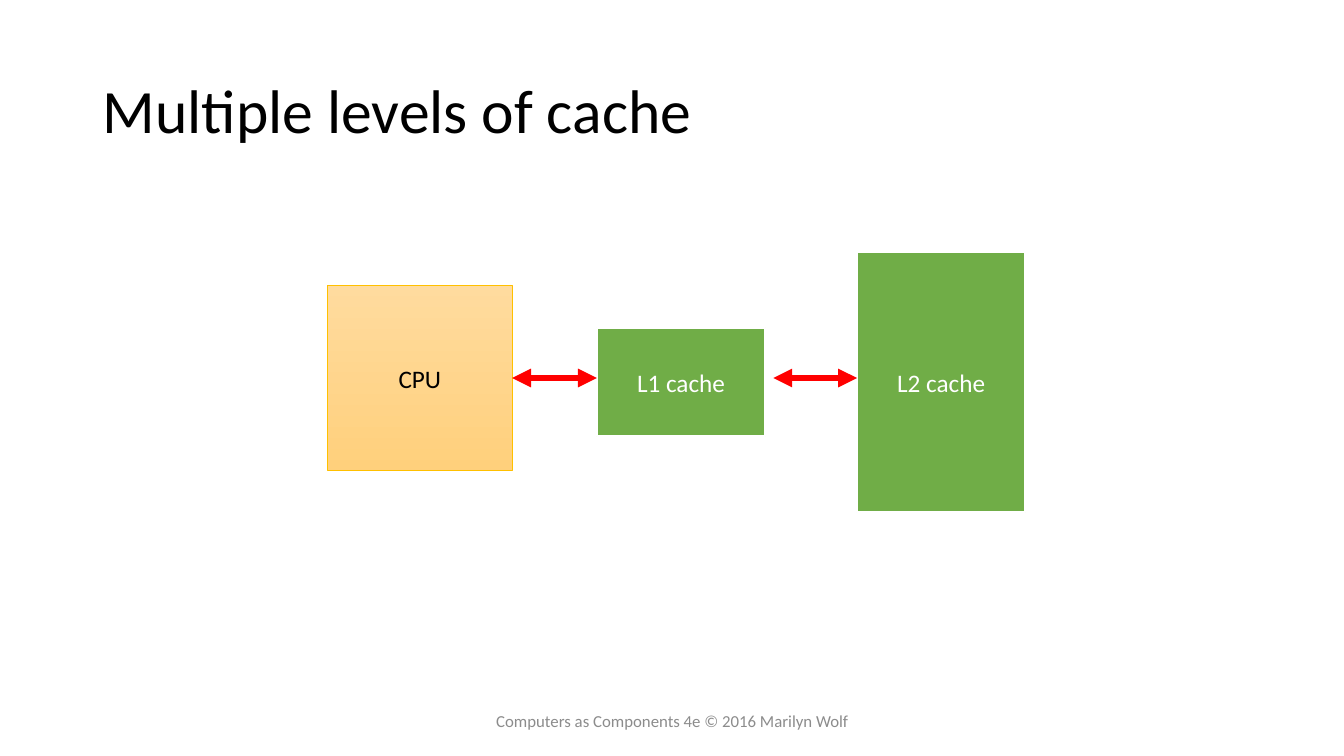
from lxml import etree
from pptx import Presentation
from pptx.dml.color import RGBColor
from pptx.enum.shapes import MSO_CONNECTOR, MSO_SHAPE
from pptx.enum.text import MSO_ANCHOR, PP_ALIGN
from pptx.oxml.ns import qn
from pptx.util import Inches, Pt

RECT = MSO_SHAPE.RECTANGLE
STRAIGHT = MSO_CONNECTOR.STRAIGHT
MIDDLE = MSO_ANCHOR.MIDDLE
LEFT, CENTER = PP_ALIGN.LEFT, PP_ALIGN.CENTER
BLACK = RGBColor(0x00, 0x00, 0x00)
WHITE = RGBColor(0xFF, 0xFF, 0xFF)
GREEN = RGBColor(0x70, 0xAD, 0x47)
RED = RGBColor(0xFF, 0x00, 0x00)
GOLD = RGBColor(0xFF, 0xC0, 0x00)
PALE = RGBColor(0xFF, 0xDB, 0x9E)
AMBER = RGBColor(0xFF, 0xD0, 0x7C)
GRAY = RGBColor(0x8C, 0x8C, 0x8C)
RIGHT_SIDE = 3
FONT = "Calibri"


def write(shape, text, size, color, align=CENTER, wrap=True):
    frame = shape.text_frame
    frame.word_wrap = wrap
    frame.vertical_anchor = MIDDLE
    para = frame.paragraphs[0]
    para.alignment = align
    run = para.add_run()
    run.text = text
    run.font.size = Pt(size)
    run.font.name = FONT
    run.font.color.rgb = color
    return para


def add_title(slide, text, left, top, width, height):
    title = slide.shapes.title
    title.left, title.top = Inches(left), Inches(top)
    title.width, title.height = Inches(width), Inches(height)
    write(title, text, 44, BLACK, LEFT).line_spacing = 0.9


def add_box(slide, text, place, color, line, weight):
    box = slide.shapes.add_shape(RECT, *map(Inches, place))
    box.shadow.inherit = False
    box.line.color.rgb = line
    box.line.width = Pt(weight)
    write(box, text, 18, color, wrap=False)
    return box


def add_cpu(slide, place):
    box = add_box(slide, "CPU", place, BLACK, GOLD, 0.5)
    box.fill.gradient()
    box.fill.gradient_angle = 270
    for stop, color in zip(box.fill.gradient_stops, (PALE, AMBER)):
        stop.color.rgb = color
    return box


def add_cache(slide, text, place):
    box = add_box(slide, text, place, WHITE, WHITE, 1.5)
    box.fill.solid()
    box.fill.fore_color.rgb = GREEN


def add_arrow(slide, start, end, y):
    arrow = slide.shapes.add_connector(
        STRAIGHT, Inches(start), Inches(y), Inches(end), Inches(y))
    arrow.line.color.rgb = RED
    arrow.line.width = Pt(4.5)
    line = arrow.line._get_or_add_ln()
    for tip in ("a:headEnd", "a:tailEnd"):
        etree.SubElement(line, qn(tip), type="triangle")
    etree.SubElement(arrow._element.spPr, qn("a:effectLst"))
    return arrow


def add_footer(slide, text, place):
    box = slide.shapes.add_textbox(*map(Inches, place))
    write(box, text, 12, GRAY)


def main():
    """Build the cache slide and save it."""
    deck = Presentation()
    deck.slide_width, deck.slide_height = Inches(13.33), Inches(7.5)
    slide = deck.slides.add_slide(deck.slide_layouts[5])
    add_title(slide, "Multiple levels of cache", 0.92, 0.4, 11.5, 1.45)
    cpu = add_cpu(slide, (3.25, 2.83, 1.83, 1.84))
    add_cache(slide, "L1 cache", (5.92, 3.25, 1.67, 1.08))
    add_cache(slide, "L2 cache", (8.5, 2.5, 1.67, 2.58))
    add_arrow(slide, 5.08, 5.92, 3.75).begin_connect(cpu, RIGHT_SIDE)
    add_arrow(slide, 7.67, 8.5, 3.75)
    add_footer(slide, "Computers as Components 4e © 2016 Marilyn Wolf",
               (4.42, 6.95, 4.5, 0.4))
    deck.save("out.pptx")


if __name__ == "__main__":
    main()
